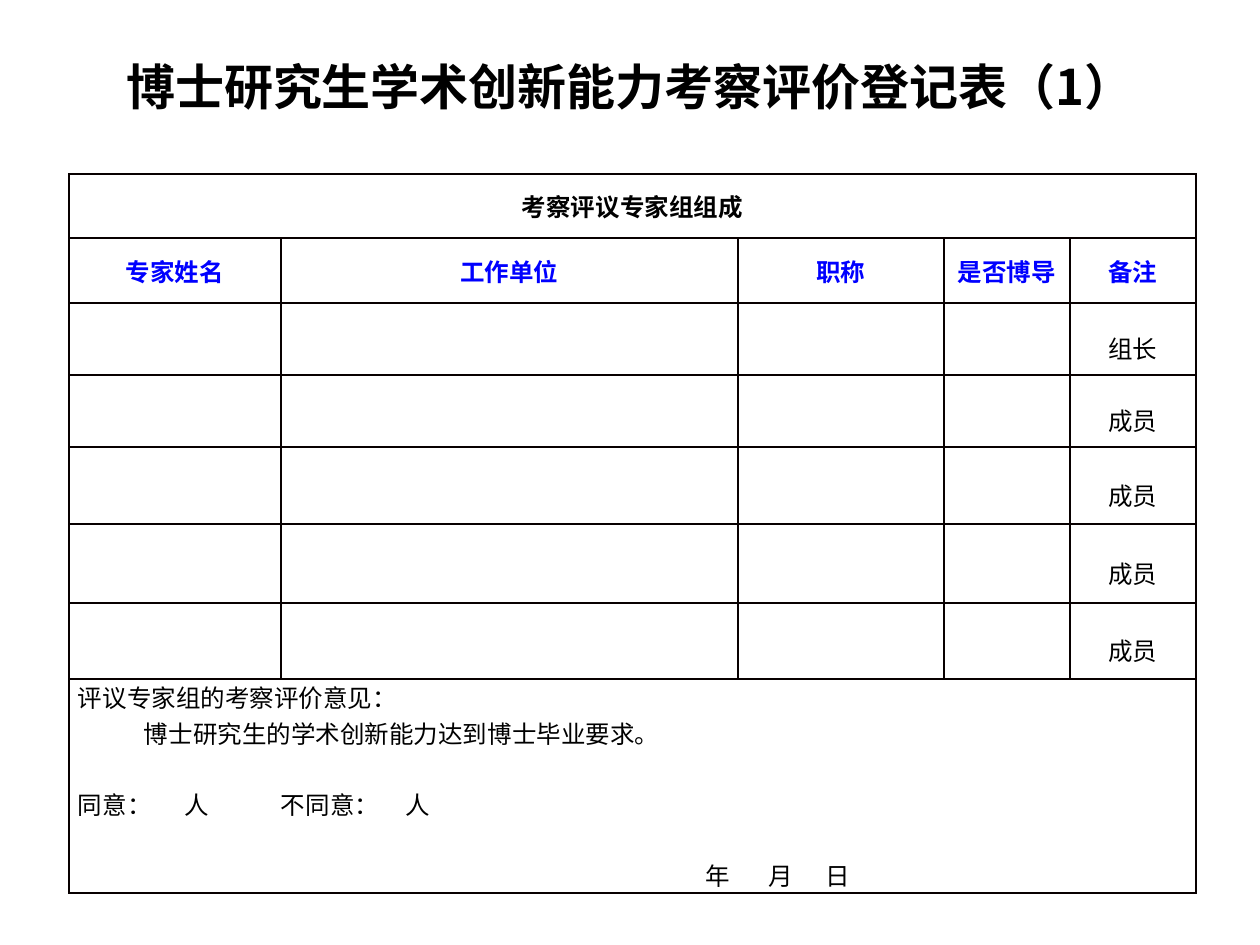
from lxml.etree import SubElement
from pptx import Presentation
from pptx.dml.color import RGBColor
from pptx.enum.text import MSO_ANCHOR, PP_ALIGN
from pptx.oxml.ns import qn
from pptx.util import Emu, Pt

BLACK = RGBColor(0x00, 0x00, 0x00)
BLUE = RGBColor(0x00, 0x00, 0xFF)
BORDER = RGBColor(0x08, 0x00, 0x00)
FONT = "Noto Sans CJK SC"
EMU_PER_PX = 914400 // 126
BLANK_LINE = 20.3  # points, one line of 14 pt text


def px(length):
    return Emu(round(length * 914400 / 126))


class FormPage:
    """Style and current slide of a registration form."""

    def __init__(self, deck):
        self.page = deck.slides.add_slide(deck.slide_layouts[5])

    def style(self, para, size=14, color=BLACK, bold=False):
        for span in para.runs:
            span.font.name = FONT
            span.font.size = Pt(size)
            span.font.bold = bold
            span.font.color.rgb = color
            SubElement(span.font._element, qn("a:ea"), typeface=FONT)

    def title(self, text, left, top, width, height):
        box = self.page.shapes.title
        box.left, box.top, box.width, box.height = map(px, (left, top, width, height))
        frame = box.text_frame
        frame.text = text
        frame.word_wrap = True
        frame.vertical_anchor = MSO_ANCHOR.MIDDLE
        para = frame.paragraphs[0]
        para.alignment = PP_ALIGN.CENTER
        self.style(para, size=28, bold=True)

    def table(self, left, top, columns, rows):
        frame = self.page.shapes.add_table(
            len(rows), len(columns), px(left), px(top), px(sum(columns)), px(sum(rows)))
        table = frame.table
        table.first_row = table.horz_banding = False
        for column, width in zip(table.columns, columns):
            column.width = px(width)
        for row, height in zip(table.rows, rows):
            row.height = px(height)
        for cell in table.iter_cells():
            self.border(cell)
            cell.fill.background()
            cell.margin_left = cell.margin_right = px(9)
            cell.margin_top = cell.margin_bottom = 0
        return table

    def border(self, cell):
        properties = cell._tc.get_or_add_tcPr()
        for side in ("a:lnL", "a:lnR", "a:lnT", "a:lnB"):
            line = SubElement(properties, qn(side), w=str(Pt(1)))
            fill = SubElement(line, qn("a:solidFill"))
            SubElement(fill, qn("a:srgbClr"), val=str(BORDER))

    def label(self, cell, text, color=BLACK, bold=False, spacing=None):
        cell.text_frame.text = text
        cell.vertical_anchor = MSO_ANCHOR.MIDDLE
        para = cell.text_frame.paragraphs[0]
        para.alignment = PP_ALIGN.CENTER
        para.line_spacing = spacing
        self.style(para, color=color, bold=bold)

    def opinion(self, cell, lines):
        """Fill a cell with (text, space before, tab stops) lines."""
        frame = cell.text_frame
        frame.text = "\n".join(text for text, _, _ in lines)
        for para, (_, gap, stops) in zip(frame.paragraphs, lines):
            para.alignment = PP_ALIGN.LEFT
            para.space_before = Pt(gap)
            if stops:
                tabs = SubElement(para._p.get_or_add_pPr(), qn("a:tabLst"))
                for stop in stops:
                    SubElement(tabs, qn("a:tab"), pos=str(px(stop)), algn="l")
            self.style(para)


def main():
    deck = Presentation()
    deck.slide_width, deck.slide_height = px(1260), px(945)
    form = FormPage(deck)
    form.title("博士研究生学术创新能力考察评价登记表（1）", 63, 38, 1134, 96)

    # Grid with full-width first and last rows
    table = form.table(69, 174, [212, 457, 206, 126, 126],
                       [64, 65, 72, 72, 77, 79, 76, 214])
    last = len(table.rows) - 1
    for row in (0, last):
        table.cell(row, 0).merge(table.cell(row, 4))

    # Headings
    form.label(table.cell(0, 0), "考察评议专家组组成", bold=True)
    headings = ["专家姓名", "工作单位", "职称", "是否博导", "备注"]
    for column, heading in enumerate(headings):
        form.label(table.cell(1, column), heading, color=BLUE, bold=True)

    # Roles of the experts
    for row in range(2, last):
        role = "组长" if row == 2 else "成员"
        form.label(table.cell(row, 4), role, spacing=1.5)

    # Opinion, votes and date
    form.opinion(table.cell(last, 0), [
        ("评议专家组的考察评价意见：", 0, []),
        ("\t博士研究生的学术创新能力达到博士毕业要求。", 0, [66]),
        ("同意：\t人\t不同意：\t人", BLANK_LINE, [107, 203, 328]),
        ("\t年\t月\t日", BLANK_LINE, [627, 690, 748]),
    ])
    deck.save("out.pptx")


if __name__ == "__main__":
    main()
